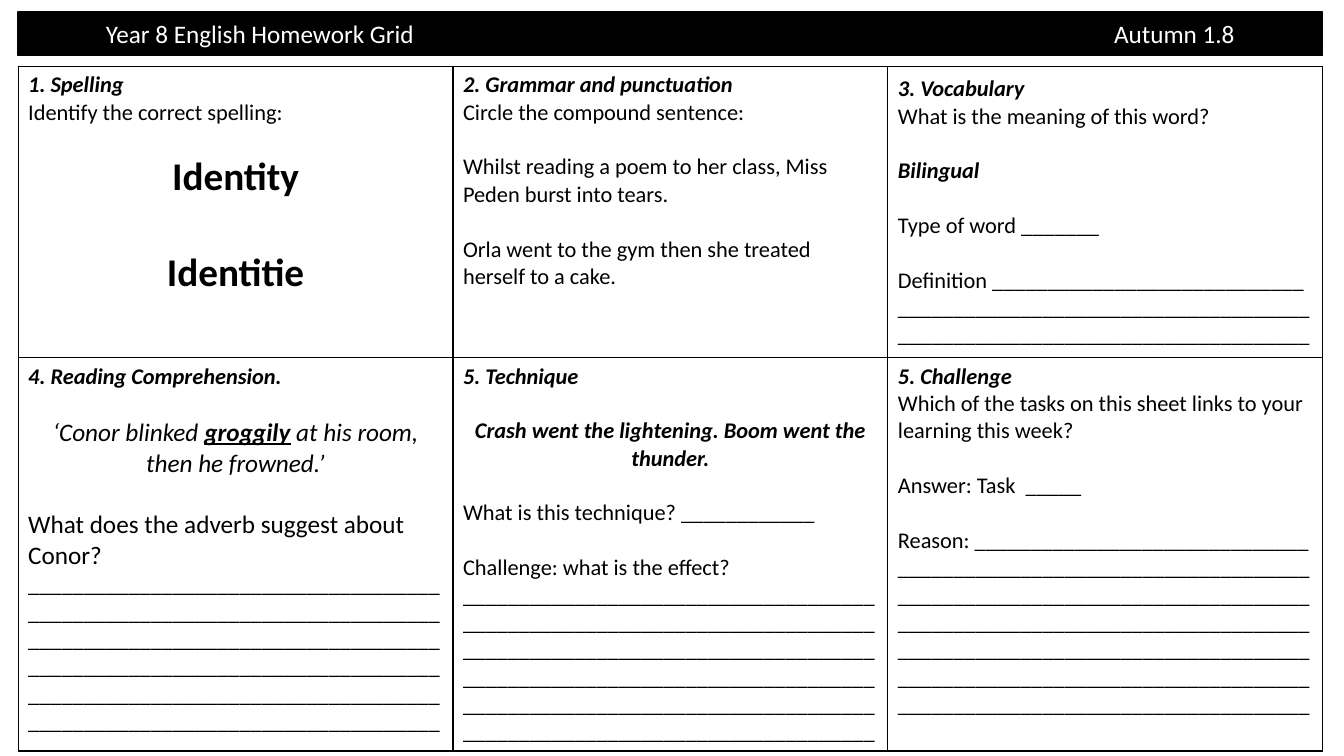
"""Build a homework grid: a black title bar above a table of six tasks."""
from lxml import etree
from pptx import Presentation
from pptx.dml.color import RGBColor
from pptx.enum.shapes import MSO_SHAPE
from pptx.enum.text import MSO_ANCHOR, PP_ALIGN
from pptx.oxml.ns import qn
from pptx.util import Inches, Pt

LEFT, WIDTH = 0.18, 12.94
COLS, HEIGHTS = 3, (2.89, 3.73)
LEAD = 1.22
BLACK, WHITE = "000000", "FFFFFF"
RULE = "_" * 37


def color(code):
    """Turn a hex string into a colour."""
    return RGBColor.from_string(code)


def style(font, size, marks="", code=BLACK):
    """Set a font: b is bold, i italic, u underlined."""
    font.name, font.size = "Calibri", Pt(size)
    font.bold, font.italic, font.underline = (m in marks for m in "biu")
    font.color.rgb = color(code)


# text, marks (c is centred), size, size of the gap line above
tasks = [
    [("1. Spelling", "bi", 16, 0),
     ("Identify the correct spelling:", "", 16, 0),
     ("Identity", "bc", 28, 16),
     ("Identitie", "bc", 28, 28)],
    [("2. Grammar and punctuation", "bi", 16, 0),
     ("Circle the compound sentence:", "", 16, 0),
     ("Whilst reading a poem to her class, Miss Peden burst into tears.", "", 16, 16),
     ("Orla went to the gym then she treated herself to a cake.", "", 16, 16)],
    [("3. Vocabulary", "bi", 16, 0),
     ("What is the meaning of this word?", "", 16, 0),
     ("Bilingual", "bi", 16, 16),
     ("Type of word _______", "", 16, 16),
     ("Definition " + "_" * 28 + " " + RULE * 2, "", 16, 16)],
    [("4. Reading Comprehension.", "bi", 16, 0),
     ("‘Conor blinked |groggily| at his room, then he frowned.’", "ic", 18, 16),
     ("What does the adverb suggest about Conor?", "", 18, 18),
     (RULE * 6, "", 16, 0)],
    [("5. Technique", "bi", 16, 0),
     ("Crash went the lightening. Boom went the thunder.", "bic", 16, 16),
     ("What is this technique? ____________", "", 16, 16),
     ("Challenge: what is the effect? " + RULE * 6, "", 16, 16)],
    [("5. Challenge", "bi", 16, 0),
     ("Which of the tasks on this sheet links to your learning this week?", "", 16, 0),
     ("Answer: Task  _____", "", 16, 16),
     ("Reason: " + "_" * 30 + " " + RULE * 6, "", 16, 16)],
]

deck = Presentation()
deck.slide_width, deck.slide_height = Inches(13.33), Inches(7.5)
slide = deck.slides.add_slide(deck.slide_layouts[6])

bar = slide.shapes.add_shape(MSO_SHAPE.RECTANGLE, Inches(LEFT), Inches(0.12),
                             Inches(WIDTH), Inches(0.43))
bar.shadow.inherit = False
bar.fill.solid()
bar.fill.fore_color.rgb = color(BLACK)
bar.line.color.rgb = color(BLACK)
bar.line.width = Pt(1)
frame = bar.text_frame
frame.margin_left = Inches(0.87)
frame.vertical_anchor = MSO_ANCHOR.MIDDLE
title = frame.paragraphs[0]
title.text = "Year 8 English Homework Grid\tAutumn 1.8"
title.alignment = PP_ALIGN.LEFT
style(title.font, 18, code=WHITE)
tabs = etree.Element(qn("a:tabLst"))
etree.SubElement(tabs, qn("a:tab"), pos=str(Inches(10)), algn="l")
title._p.get_or_add_pPr().insert(0, tabs)

grid = slide.shapes.add_table(len(HEIGHTS), COLS, Inches(LEFT), Inches(0.66),
                              Inches(WIDTH), Inches(sum(HEIGHTS))).table
grid.first_row = grid.horz_banding = False
for row, height in zip(grid.rows, HEIGHTS):
    row.height = Inches(height)

for n, task in enumerate(tasks):
    cell = grid.cell(*divmod(n, COLS))
    cell.fill.background()
    if n == 2:
        cell.vertical_anchor = MSO_ANCHOR.MIDDLE
    for k, side in enumerate("LRTB"):
        edge = etree.Element(qn("a:ln" + side), w=str(Pt(1)))
        fill = etree.SubElement(edge, qn("a:solidFill"))
        etree.SubElement(fill, qn("a:srgbClr"), val=BLACK)
        cell._tc.get_or_add_tcPr().insert(k, edge)
    for k, (text, marks, size, gap) in enumerate(task):
        para = cell.text_frame.add_paragraph() if k else cell.text_frame.paragraphs[0]
        para.alignment = PP_ALIGN.CENTER if "c" in marks else PP_ALIGN.LEFT
        para.space_before = Pt(round(gap * LEAD, 1))
        style(para.font, size, marks)
        for j, part in enumerate(text.split("|")):
            run = para.add_run()
            run.text = part
            if j % 2:
                run.font.bold = run.font.underline = True

deck.save("out.pptx")
